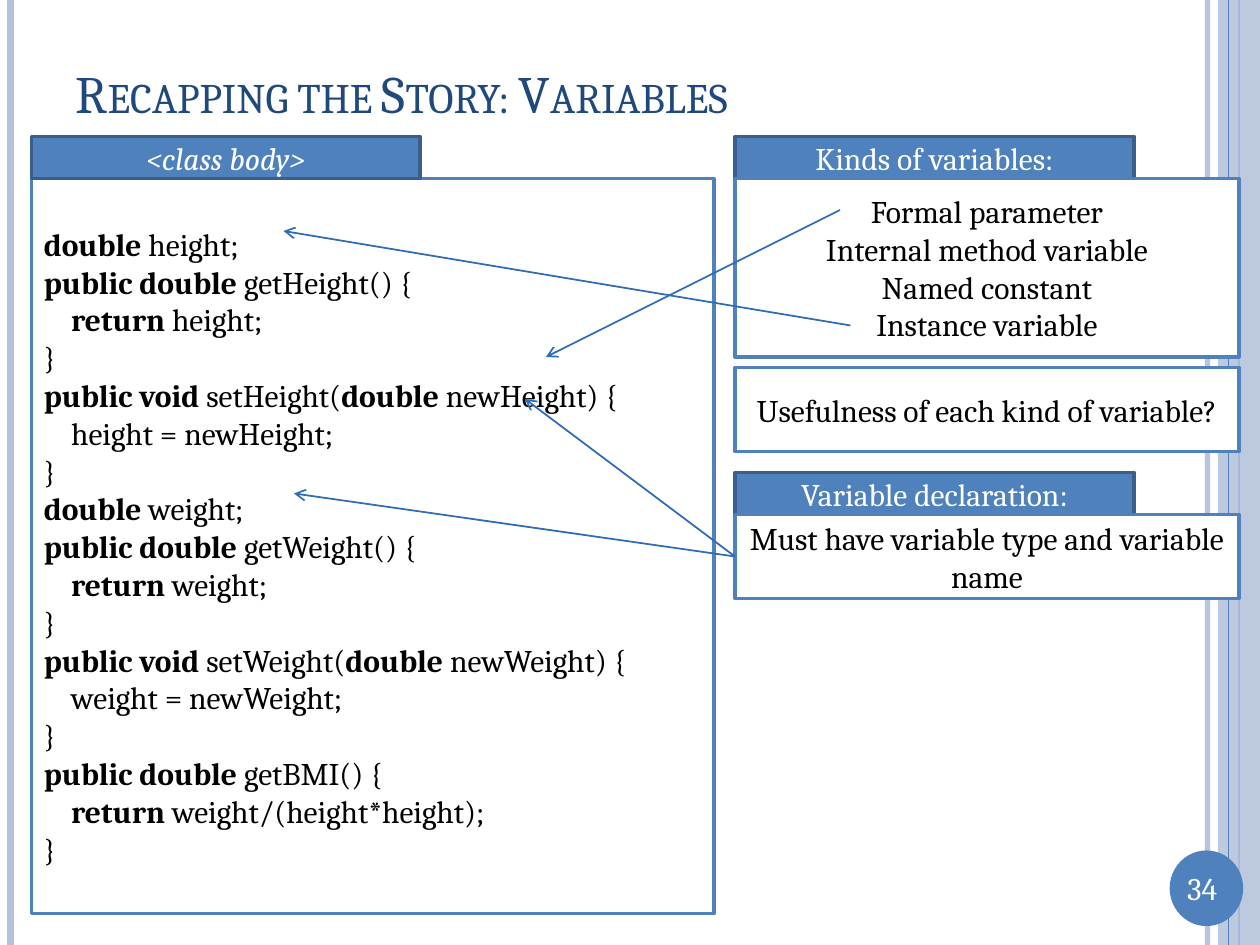
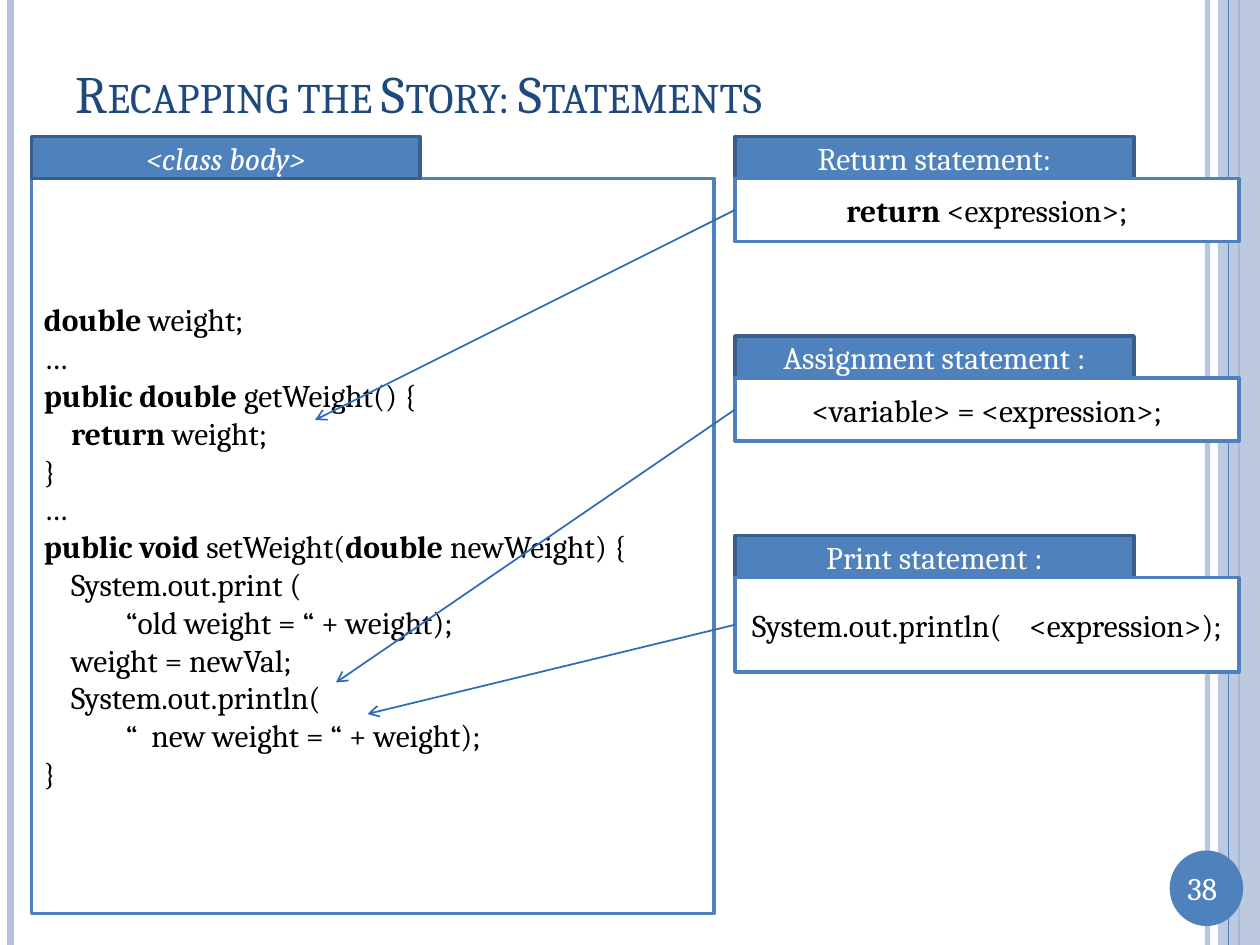
from collections import namedtuple

from pptx import Presentation
from pptx.dml.color import RGBColor
from pptx.enum.shapes import MSO_CONNECTOR as Connector, MSO_SHAPE as Preset
from pptx.enum.text import MSO_ANCHOR as Anchor, PP_ALIGN as Align
from pptx.oxml.ns import qn
from pptx.oxml.xmlchemy import OxmlElement
from pptx.util import Pt

EMU_PER_PX = 7620
SLIDE_WIDTH, SLIDE_HEIGHT = 1200, 900
FONT = "Cambria"
BODY_SIZE = 18
TITLE_SIZE = 30
SPACE_POINTS = 3.9
INDENT = 26
TAB_HEIGHT = 40
CODE_LEFT, PANEL_LEFT, CONTENT_TOP = 30, 700, 170

WHITE = RGBColor(0xFF, 0xFF, 0xFF)
BLACK = RGBColor(0x00, 0x00, 0x00)
NAVY = RGBColor(0x1F, 0x49, 0x7D)
BLUE = RGBColor(0x4F, 0x81, 0xBD)
EDGE_BLUE = RGBColor(0x3A, 0x5F, 0x8C)
ARROW_BLUE = RGBColor(0x2C, 0x6C, 0xB9)
PALE_BLUE = RGBColor(0xB3, 0xC1, 0xDB)

Run = namedtuple("Run", "text bold extra_spaces", defaults=(False, 0))
Line = namedtuple("Line", "runs level")


def px(length):
    return length * EMU_PER_PX


def bold(text):
    return Run(text, bold=True)


def gap(spaces):
    return Run(" ", extra_spaces=spaces - 1)


def line(*parts, level=0):
    return Line([Run(part) if isinstance(part, str) else part for part in parts], level)


def set_opacity(shape, percent):
    for color in shape._element.iter(qn("a:srgbClr")):
        alpha = OxmlElement("a:alpha")
        alpha.set("val", str(percent * 1000))
        color.append(alpha)


def write_lines(frame, lines, color, align, size=BODY_SIZE, italic=False):
    frame.word_wrap = True
    for index, content in enumerate(lines):
        paragraph = frame.paragraphs[0] if index == 0 else frame.add_paragraph()
        paragraph.alignment = align
        font = paragraph.font
        font.name, font.size, font.italic = FONT, Pt(size), italic
        font.color.rgb = color
        if content.level:
            paragraph._p.get_or_add_pPr().set("marL", str(px(content.level * INDENT)))
        for part in content.runs:
            run = paragraph.add_run()
            run.text = part.text
            if part.bold:
                run.font.bold = True
            if part.extra_spaces:
                spacing = round(part.extra_spaces * SPACE_POINTS * 100)
                run._r.get_or_add_rPr().set("spc", str(spacing))


def add_filled_shape(slide, preset, left, top, width, height, fill, edge=None):
    shape = slide.shapes.add_shape(preset, px(left), px(top), px(width), px(height))
    shape.shadow.inherit = False
    shape.fill.solid()
    shape.fill.fore_color.rgb = fill
    if edge is None:
        shape.line.fill.background()
    else:
        shape.line.color.rgb = edge
        shape.line.width = Pt(2)
    return shape


def add_box(slide, left, top, width, height, lines, align=Align.CENTER):
    box = add_filled_shape(slide, Preset.RECTANGLE, left, top, width, height, WHITE, BLUE)
    box.text_frame.vertical_anchor = Anchor.MIDDLE
    write_lines(box.text_frame, lines, BLACK, align)


def add_heading(slide, left, box_top, width, text, italic=False):
    heading = add_filled_shape(slide, Preset.RECTANGLE, left, box_top - TAB_HEIGHT,
                               width, TAB_HEIGHT, BLUE, EDGE_BLUE)
    heading.text_frame.vertical_anchor = Anchor.MIDDLE
    write_lines(heading.text_frame, [line(text)], WHITE, Align.CENTER, italic=italic)


def add_panel(slide, top, height, lines, heading=None):
    if heading:
        add_heading(slide, PANEL_LEFT, top, 380, heading)
    add_box(slide, PANEL_LEFT, top, 480, height, lines)


def add_code(slide, lines):
    add_box(slide, CODE_LEFT, CONTENT_TOP, 650, 700, lines, Align.LEFT)
    add_heading(slide, CODE_LEFT, CONTENT_TOP, 370, "<class body>", italic=True)


def add_line(slide, start, end, color, width):
    connector = slide.shapes.add_connector(
        Connector.STRAIGHT, *(px(length) for length in (*start, *end)))
    connector.line.color.rgb = color
    connector.line.width = Pt(width)
    connector._element.spPr.append(OxmlElement("a:effectLst"))
    return connector


def add_arrow(slide, start, end):
    arrow = add_line(slide, start, end, ARROW_BLUE, 1)
    head = OxmlElement("a:tailEnd")
    head.set("type", "arrow")
    arrow.line._get_or_add_ln().append(head)


def add_rule(slide, x, color, width):
    return add_line(slide, (x, 0), (x, SLIDE_HEIGHT), color, width)


def add_text(slide, left, top, width, height, text, color, align, size=BODY_SIZE):
    box = slide.shapes.add_textbox(px(left), px(top), px(width), px(height))
    write_lines(box.text_frame, [line(text)], color, align, size)
    return box


def add_base_slide(presentation, topic, number):
    slide = presentation.slides.add_slide(presentation.slide_layouts[6])
    set_opacity(add_rule(slide, 1150, PALE_BLUE, 3), 93)
    add_rule(slide, 10, PALE_BLUE, 4.5)
    add_rule(slide, 1180, BLUE, 1.5)
    band = add_filled_shape(slide, Preset.RECTANGLE, 1160, 0, 40, SLIDE_HEIGHT, PALE_BLUE)
    set_opacity(band, 87)
    add_rule(slide, 1170, BLUE, 0.75)
    add_filled_shape(slide, Preset.OVAL, 1114, 810, 70, 72, BLUE)
    add_text(slide, 1110, 822, 70, 48, str(number), WHITE, Align.CENTER)
    title = add_text(slide, 60, 36, 1040, 104, f"Recapping the Story: {topic}",
                     NAVY, Align.LEFT, TITLE_SIZE)
    title.text_frame.vertical_anchor = Anchor.MIDDLE
    for run in title.text_frame.paragraphs[0].runs:
        run._r.get_or_add_rPr().set("cap", "small")
    return slide


def declaration(field):
    return line(bold("double"), f" {field};")


def getter(field, expression):
    return [
        line(bold("public double "), f"get{field}() {{"),
        line(bold("return"), f" {expression};", level=1),
        line("}"),
    ]


def setter(field, body):
    return [
        line(bold("public void "), f"set{field}(", bold("double "), f"new{field}) {{"),
        *body,
        line("}"),
    ]


def accessors(field):
    name = field.capitalize()
    assignment = line(f"{field} = new{name};", level=1)
    return [declaration(field), *getter(name, field), *setter(name, [assignment])]


def build_variables(presentation):
    slide = add_base_slide(presentation, "Variables", 34)
    add_code(slide, [*accessors("height"), *accessors("weight"),
                     *getter("BMI", "weight/(height*height)")])
    add_panel(slide, 490, 80, [line("Must have variable type and variable name")],
              "Variable declaration:")
    for target in ((280, 470), (500, 380)):
        add_arrow(slide, (PANEL_LEFT, 530), target)
    kinds = ("Formal parameter", "Internal method variable",
             "Named constant", "Instance variable")
    add_panel(slide, CONTENT_TOP, 170, [line(kind) for kind in kinds], "Kinds of variables:")
    add_arrow(slide, (800, 200), (520, 340))
    add_arrow(slide, (810, 310), (270, 220))
    add_panel(slide, 350, 80, [line("Usefulness of each kind of variable?")])


def build_statements(presentation):
    slide = add_base_slide(presentation, "Statements", 38)
    setter_body = [
        line("System.out.print (", level=1),
        line("“old weight = “ + weight);", level=3),
        line("weight = newVal;", level=1),
        line("System.out.println(", level=1),
        line("“", gap(2), "new weight = “ + weight);", level=3),
    ]
    add_code(slide, [declaration("weight"), line("…"), *getter("Weight", "weight"),
                     line("…"), *setter("Weight", setter_body)])
    statements = (
        ("Return statement:", line(bold("return"), " <expression>;"), 60, (300, 400)),
        ("Assignment statement :", line("<variable> = <expression>;"), 60, (320, 650)),
        ("Print statement :", line("System.out.println(", gap(4), "<expression>);"),
         90, (350, 680)),
    )
    for index, (heading, syntax, height, target) in enumerate(statements):
        top = CONTENT_TOP + index * 190
        add_panel(slide, top, height, [syntax], heading)
        add_arrow(slide, (PANEL_LEFT, top + height // 2), target)


def main():
    presentation = Presentation()
    presentation.slide_width = px(SLIDE_WIDTH)
    presentation.slide_height = px(SLIDE_HEIGHT)
    build_variables(presentation)
    build_statements(presentation)
    presentation.save("out.pptx")


if __name__ == "__main__":
    main()
